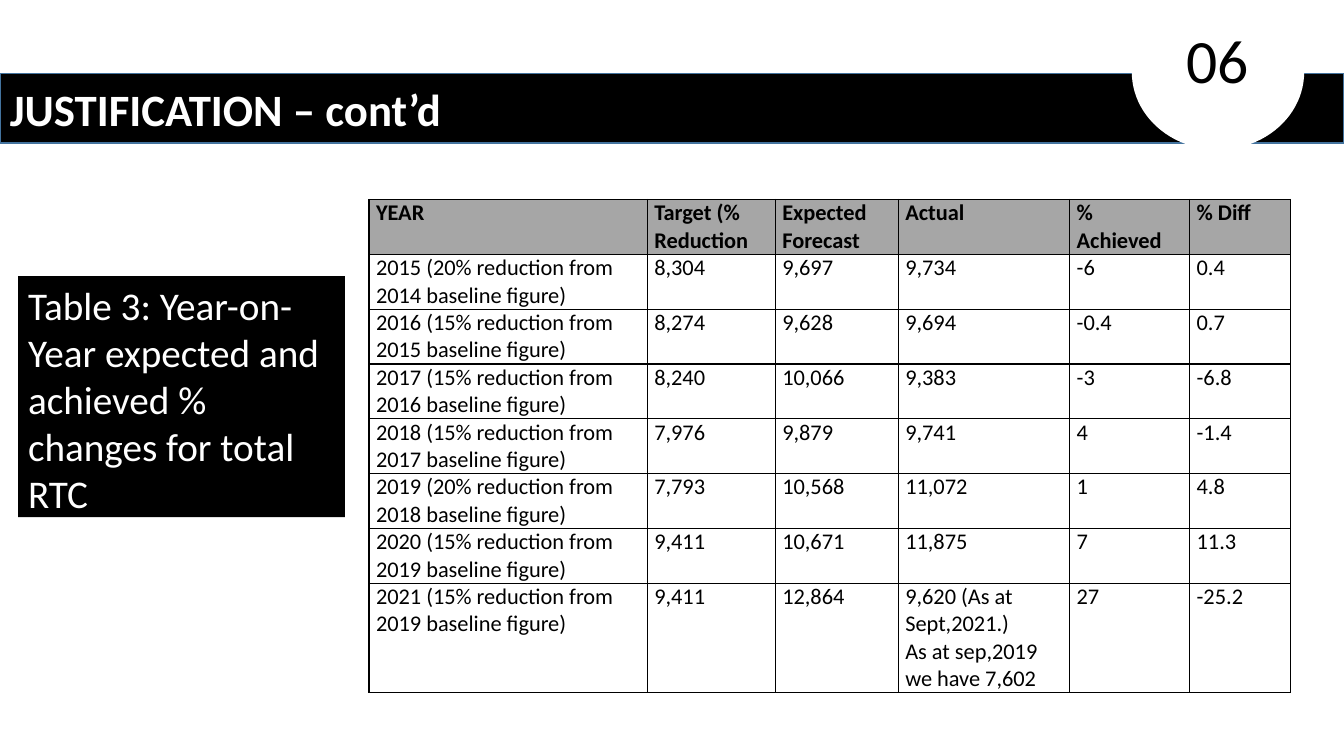
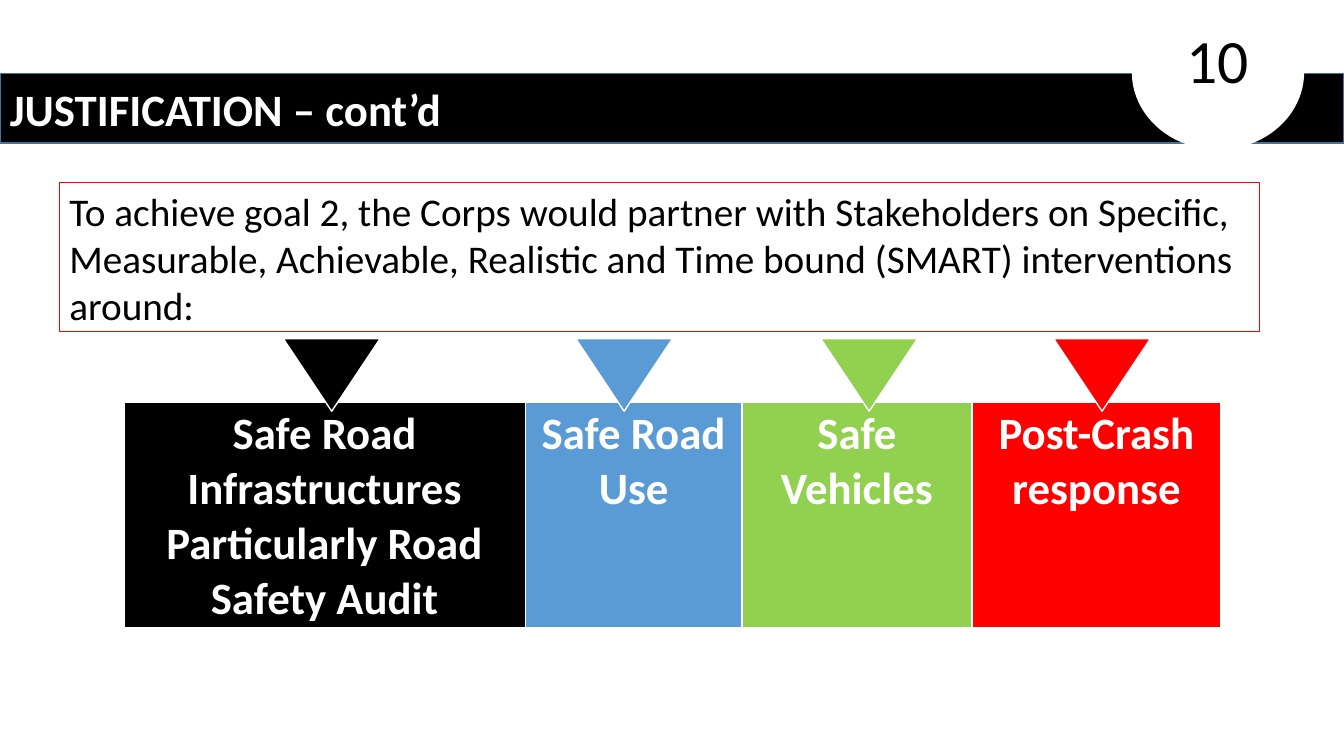
import pptx
import pptx.util
import pptx.dml.color
import pptx.enum.shapes
import pptx.enum.text
import pptx.oxml
import pptx.oxml.ns
from pptx.util import Inches

FONT = "Calibri"
BLACK, WHITE, GREY = "000000", "FFFFFF", "A6A6A6"
BLUE, GREEN, RED, EDGE = "5B9BD5", "92D050", "FF0000", "43739E"
SHAPE = pptx.enum.shapes.MSO_SHAPE
ANCHOR = pptx.enum.text.MSO_ANCHOR
ALIGN = pptx.enum.text.PP_ALIGN

HEADINGS = ["YEAR", "Target (% Reduction", "Expected Forecast", "Actual",
            "% Achieved", "% Diff"]
# Year, reduction target, baseline year, then the figures
RESULTS = [
    (2015, 20, 2014, "8,304", "9,697", "9,734", "-6", "0.4"),
    (2016, 15, 2015, "8,274", "9,628", "9,694", "-0.4", "0.7"),
    (2017, 15, 2016, "8,240", "10,066", "9,383", "-3", "-6.8"),
    (2018, 15, 2017, "7,976", "9,879", "9,741", "4", "-1.4"),
    (2019, 20, 2018, "7,793", "10,568", "11,072", "1", "4.8"),
    (2020, 15, 2019, "9,411", "10,671", "11,875", "7", "11.3"),
    (2021, 15, 2019, "9,411", "12,864",
     "9,620 (As at Sept,2021.)\nAs at sep,2019 we have 7,602", "27", "-25.2"),
]
# Text, colour, column width, left edge of the arrow
INTERVENTIONS = [
    ("Safe Road Infrastructures Particularly Road Safety Audit", BLACK, 3.98, 2.81),
    ("Safe Road Use", BLUE, 2.15, 5.71),
    ("Safe Vehicles", GREEN, 2.28, 8.14),
    ("Post-Crash response", RED, 2.47, 10.45),
]


def rgb(color):
    return pptx.dml.color.RGBColor.from_string(color)


def write(tf, text, size=16, color=BLACK, bold=False, align=ALIGN.LEFT):
    """Fill a text frame, one paragraph per line of text."""
    for i, line in enumerate(text.split("\n")):
        p = tf.add_paragraph() if i else tf.paragraphs[0]
        p.alignment = align
        r = p.add_run()
        r.text = line
        r.font.name, r.font.size, r.font.bold = FONT, pptx.util.Pt(size), bold
        r.font.color.rgb = rgb(color)


def set_fill(fill, color):
    if color:
        fill.solid()
        fill.fore_color.rgb = rgb(color)
    else:
        fill.background()


def add_box(s, box, kind=SHAPE.RECTANGLE, fill=None, line=None, width=1,
            rotation=0, text="", anchor=ANCHOR.TOP, **fmt):
    sp = s.shapes.add_shape(kind, *map(Inches, box))
    sp.shadow.inherit = False
    sp.rotation = rotation
    set_fill(sp.fill, fill)
    set_fill(sp.line.fill, line)
    if line:
        sp.line.width = pptx.util.Pt(width)
    if text:
        sp.text_frame.word_wrap = True
        sp.text_frame.vertical_anchor = anchor
        write(sp.text_frame, text, **fmt)
    return sp


def add_grid(s, left, top, widths, heights):
    """Add an unstyled table and return it."""
    frame = s.shapes.add_table(len(heights), len(widths), Inches(left), Inches(top),
                               Inches(sum(widths)), Inches(sum(heights)))
    table = frame.table
    table.first_row = table.horz_banding = False
    for column, width in zip(table.columns, widths):
        column.width = Inches(width)
    for row, height in zip(table.rows, heights):
        row.height = Inches(height)
    return table


def set_cell(cell, text, fill=None, border=BLACK, margins=None, **fmt):
    if margins:
        cell.margin_left = cell.margin_right = Inches(margins[0])
        cell.margin_top = cell.margin_bottom = Inches(margins[1])
    write(cell.text_frame, text, **fmt)
    # Borders come before the fill in the cell properties
    props = cell._tc.get_or_add_tcPr()
    for side in ("lnL", "lnR", "lnT", "lnB"):
        props.append(pptx.oxml.parse_xml(
            f'<a:{side} {pptx.oxml.ns.nsdecls("a")} w="12700"><a:solidFill>'
            f'<a:srgbClr val="{border}"/></a:solidFill></a:{side}>'))
    set_fill(cell.fill, fill)


def add_title(s, title):
    add_box(s, (0, 0.73, 13.33, 0.69), fill=BLACK, line=EDGE, text=title,
            anchor=ANCHOR.MIDDLE, size=32, color=WHITE, bold=True)


def add_number(s, number, left=11.31, top=-0.14):
    """Slide number on a white half-round tab."""
    add_box(s, (left, top, 1.54, 1.71), kind=SHAPE.FLOWCHART_DELAY,
            fill=WHITE, rotation=90)
    tb = s.shapes.add_textbox(Inches(left + 0.36), Inches(top + 0.31),
                              Inches(0.82), Inches(0.77))
    tb.text_frame.word_wrap = False
    write(tb.text_frame, number, size=44)


def add_results(s, left, top):
    row = 0.535
    table = add_grid(s, left, top, [2.76, 1.27, 1.22, 1.7, 1.19, 1],
                     [row] * len(RESULTS) + [2 * row])
    rows = [HEADINGS] + [
        [f"{year} ({cut}% reduction from {base} baseline figure)", *figures]
        for year, cut, base, *figures in RESULTS]
    for i, texts in enumerate(rows):
        for j, text in enumerate(texts):
            set_cell(table.cell(i, j), text, fill=None if i else GREY,
                     margins=(0.07, 0), bold=i == 0)


def add_interventions(s, left, top):
    table = add_grid(s, left, top, [item[2] for item in INTERVENTIONS], [2.23])
    for j, (text, color, _, arrow_left) in enumerate(INTERVENTIONS):
        set_cell(table.cell(0, j), text, fill=color, border=WHITE, size=32,
                 color=WHITE, bold=True, align=ALIGN.CENTER)
        add_box(s, (arrow_left, top - 0.63, 0.96, 0.72), rotation=180,
                kind=SHAPE.ISOSCELES_TRIANGLE, fill=color, line=WHITE)


def results_slide(s):
    add_box(s, (0.18, 2.74, 3.24, 2.39), fill=BLACK, size=28, color=WHITE,
            text="Table 3: Year-on-Year expected and achieved % changes for total RTC")
    add_results(s, 3.66, 1.98)


def interventions_slide(s):
    add_box(s, (0.59, 1.81, 11.9, 1.48), line=RED, width=0.75, size=28,
            text="To achieve goal 2, the Corps would partner with Stakeholders on "
                 "Specific, Measurable, Achievable, Realistic and Time bound (SMART) "
                 "interventions around:")
    add_interventions(s, 1.23, 3.99)


def main():
    prs = pptx.Presentation()
    prs.slide_width, prs.slide_height = Inches(13.33), Inches(7.5)
    for number, build in (("06", results_slide), ("10", interventions_slide)):
        s = prs.slides.add_slide(prs.slide_layouts[6])
        add_title(s, "JUSTIFICATION – cont’d")
        build(s)
        add_number(s, number)
    prs.save("out.pptx")


if __name__ == "__main__":
    main()
